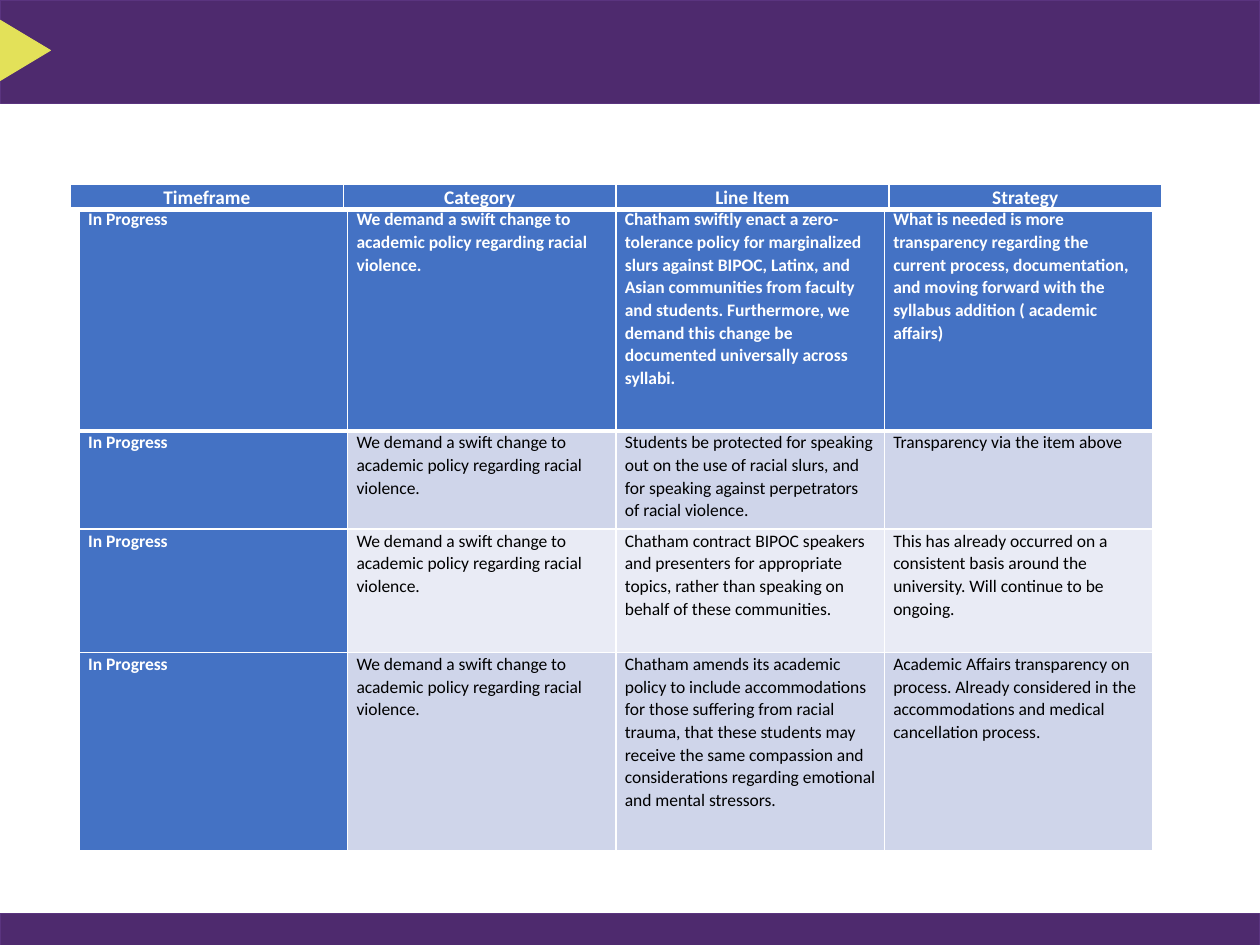
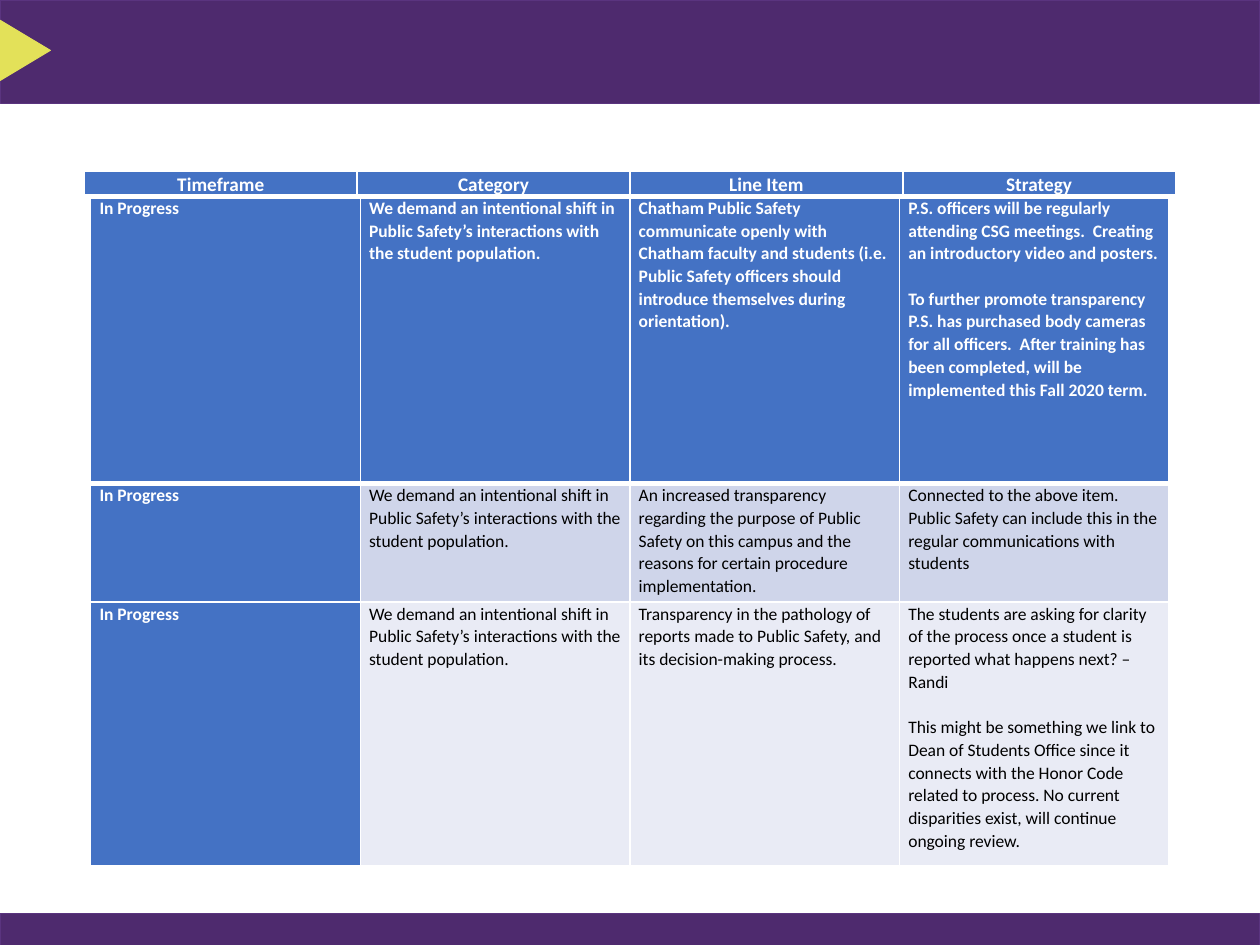
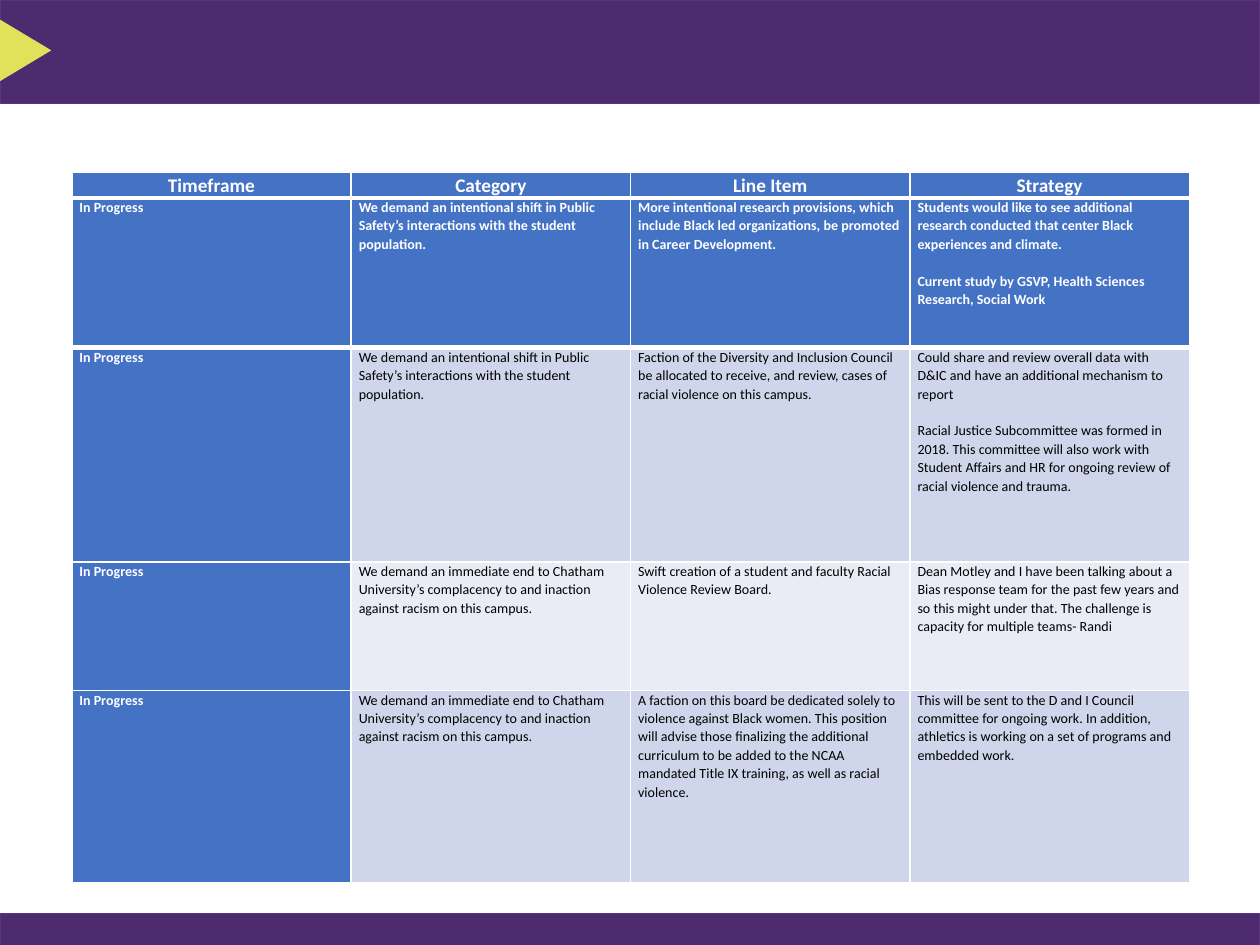
from pptx import Presentation
from pptx import util as u
from pptx.dml.color import RGBColor
from pptx.enum import shapes, text
from pptx.oxml import parse_xml
from pptx.oxml.ns import nsdecls

THEME = dict(
    font="Calibri", purple="4E2A6E", edge="5A347F", lime="E3E159",
    blue="4472C4", stripes=("CFD5EA", "E9EBF5"), white="FFFFFF", black="000000",
    header_size=11, spacing=1.07, thin=1, thick=3, outline=0.5,
)
SLIDE_W, SLIDE_H = 10, 7.5
HEADINGS = ("Timeframe", "Category", "Line Item", "Strategy")
HEADER_H, HEADER_INSET = 0.19, 0.07
STATUS = "In Progress"
POLICY = "We demand a swift change to academic policy regarding racial violence."
SAFETY = ("We demand an intentional shift in Public Safety’s interactions with "
          "the student population.")
INACTION = ("We demand an immediate end to Chatham University’s complacency to and "
            "inaction against racism on this campus.")

SLIDES = [
    dict(
        header=(0.56, 1.46, 8.66), body=(0.63, 1.65, 8.52), size=10, inset=0.07, gap=13,
        rows=[
            (1.77, POLICY,
             "Chatham swiftly enact a zero-tolerance policy for marginalized slurs against "
             "BIPOC, Latinx, and Asian communities from faculty and students. Furthermore, "
             "we demand this change be documented universally across syllabi.",
             ["What is needed is more transparency regarding the current process, "
              "documentation, and moving forward with the syllabus addition ( academic "
              "affairs)"]),
            (0.78, POLICY,
             "Students be protected for speaking out on the use of racial slurs, and for "
             "speaking against perpetrators of racial violence.",
             ["Transparency via the item above"]),
            (0.98, POLICY,
             "Chatham contract BIPOC speakers and presenters for appropriate topics, rather "
             "than speaking on behalf of these communities.",
             ["This has already occurred on a consistent basis around the university. Will "
              "continue to be ongoing."]),
            (1.57, POLICY,
             "Chatham amends its academic policy to include accommodations for those "
             "suffering from racial trauma, that these students may receive the same "
             "compassion and considerations regarding emotional and mental stressors.",
             ["Academic Affairs transparency on process. Already considered in the "
              "accommodations and medical cancellation process."]),
        ],
    ),
    dict(
        header=(0.67, 1.36, 8.66), body=(0.72, 1.56, 8.56), size=10, inset=0.07, gap=13,
        rows=[
            (2.28, SAFETY,
             "Chatham Public Safety communicate openly with Chatham faculty and students "
             "(i.e. Public Safety officers should introduce themselves during orientation).",
             ["P.S. officers will be regularly attending CSG meetings.  Creating an "
              "introductory video and posters.",
              "To further promote transparency P.S. has purchased body cameras for all "
              "officers.  After training has been completed, will be implemented this Fall "
              "2020 term."]),
            (0.94, SAFETY,
             "An increased transparency regarding the purpose of Public Safety on this "
             "campus and the reasons for certain procedure implementation.",
             ["Connected to the above item. Public Safety can include this in the regular "
              "communications with students"]),
            (2.09, SAFETY,
             "Transparency in the pathology of reports made to Public Safety, and its "
             "decision-making process.",
             ["The students are asking for clarity of the process once a student is "
              "reported what happens next? – Randi",
              "This might be something we link to Dean of Students Office since it connects "
              "with the Honor Code related to process. No current disparities exist, will "
              "continue ongoing review."]),
        ],
    ),
    dict(
        header=(0.57, 1.37, 8.87), body=(0.57, 1.57, 8.87), size=8, inset=0.06, gap=10.5,
        rows=[
            (1.19, SAFETY,
             "More intentional research provisions, which include Black led organizations, "
             "be promoted in Career Development.",
             ["Students would like to see additional research conducted that center Black "
              "experiences and climate.",
              "Current study by GSVP, Health Sciences Research, Social Work"]),
            (1.7, SAFETY,
             "Faction of the Diversity and Inclusion Council be allocated to receive, and "
             "review, cases of racial violence on this campus.",
             ["Could share and review overall data with D&IC and have an additional "
              "mechanism to report",
              "Racial Justice Subcommittee was formed in 2018. This committee will also work "
              "with Student Affairs and HR for ongoing review of racial violence and "
              "trauma."]),
            (1.02, INACTION,
             "Swift creation of a student and faculty Racial Violence Review Board.",
             ["Dean Motley and I have been talking about a Bias response team for the past "
              "few years and so this might under that. The challenge is capacity for "
              "multiple teams- Randi"]),
            (1.53, INACTION,
             "A faction on this board be dedicated solely to violence against Black women. "
             "This position will advise those finalizing the additional curriculum to be "
             "added to the NCAA mandated Title IX training, as well as racial violence.",
             ["This will be sent to the D and I Council committee for ongoing work. In "
              "addition, athletics is working on a set of programs and embedded work."]),
        ],
    ),
]


def rgb(name):
    return RGBColor.from_string(THEME.get(name, name))


def add_block(s, kind, box, fill, line):
    sp = s.shapes.add_shape(kind, *(u.Inches(v) for v in box))
    sp.shadow.inherit = False
    sp.fill.solid()
    sp.fill.fore_color.rgb = rgb(fill)
    sp.line.color.rgb = rgb(line)
    sp.line.width = u.Pt(THEME["outline"])
    return sp


def add_frame(s):
    kind = shapes.MSO_SHAPE
    add_block(s, kind.RECTANGLE, (0, 0, SLIDE_W, 0.82), "purple", "edge")
    pointer = add_block(s, kind.ISOSCELES_TRIANGLE, (-0.04, 0.2, 0.48, 0.4), "lime", "lime")
    pointer.rotation = 90
    add_block(s, kind.RECTANGLE, (0, SLIDE_H - 0.25, SLIDE_W, 0.25), "purple", "edge")


def set_borders(cell, top, bottom):
    widths = dict(L=THEME["thin"], R=THEME["thin"], T=top, B=bottom)
    for i, (side, width) in enumerate(widths.items()):
        cell._tc.get_or_add_tcPr().insert(i, parse_xml(
            f'<a:ln{side} {nsdecls("a")} w="{u.Pt(width)}"><a:solidFill>'
            f'<a:srgbClr val="{THEME["white"]}"/></a:solidFill></a:ln{side}>'))


def fill_cell(cell, paragraphs, fill, size, inset, strong, align=None, gap=0):
    cell.margin_left = cell.margin_right = u.Inches(inset)
    cell.margin_top = cell.margin_bottom = 0
    cell.fill.solid()
    cell.fill.fore_color.rgb = rgb(fill)
    tf = cell.text_frame
    for i, words in enumerate(paragraphs):
        p = tf.add_paragraph() if i else tf.paragraphs[0]
        p.text = words
        p.alignment = align
        p.line_spacing = THEME["spacing"]
        if i:
            p.space_before = u.Pt(gap)
        p.font.name = THEME["font"]
        p.font.size = u.Pt(size)
        p.font.bold = strong
        p.font.color.rgb = rgb("white" if strong else "black")


def add_grid(s, place, heights):
    left, top, width = place
    table = s.shapes.add_table(
        len(heights), len(HEADINGS), u.Inches(left), u.Inches(top),
        u.Inches(width), u.Inches(sum(heights))).table
    table.first_row = table.horz_banding = False
    for row, height in zip(table.rows, heights):
        row.height = u.Inches(height)
    return table


def add_body(s, page):
    table = add_grid(s, page["body"], [row[0] for row in page["rows"]])
    for r, (_, category, item, strategy) in enumerate(page["rows"]):
        for c, words in enumerate(([STATUS], [category], [item], strategy)):
            strong = r == 0 or c == 0
            fill = "blue" if strong else THEME["stripes"][(r - 1) % 2]
            cell = table.cell(r, c)
            fill_cell(cell, words, fill, page["size"], page["inset"], strong, gap=page["gap"])
            set_borders(cell, THEME["thick" if r == 1 else "thin"],
                        THEME["thick" if r == 0 else "thin"])


def add_header(s, page):
    table = add_grid(s, page["header"], [HEADER_H])
    for c, heading in enumerate(HEADINGS):
        cell = table.cell(0, c)
        fill_cell(cell, [heading], "blue", THEME["header_size"], HEADER_INSET, True,
                  text.PP_ALIGN.CENTER)
        set_borders(cell, THEME["thin"], THEME["thick"])


def main():
    prs = Presentation()
    prs.slide_width, prs.slide_height = u.Inches(SLIDE_W), u.Inches(SLIDE_H)
    for page in SLIDES:
        s = prs.slides.add_slide(prs.slide_layouts[6])
        add_frame(s)
        add_body(s, page)
        add_header(s, page)
    prs.save("out.pptx")


if __name__ == "__main__":
    main()
